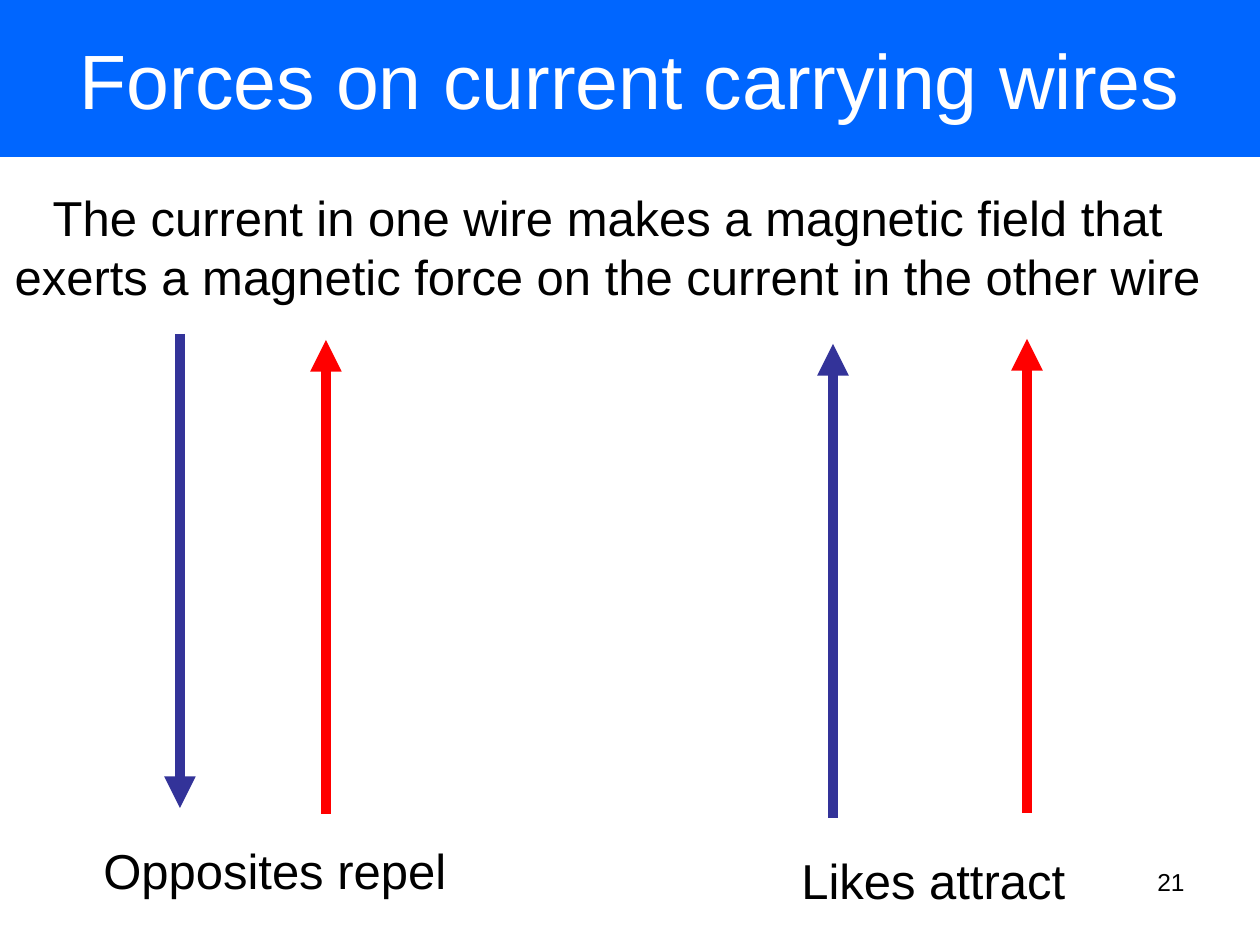
import pptx
import pptx.util
import pptx.dml.color
import pptx.enum.shapes
import pptx.enum.text
import pptx.oxml.ns
from lxml import etree

EMU_PER_PX = 914400 / 126
ALIGN = pptx.enum.text.PP_ALIGN
ANCHOR = pptx.enum.text.MSO_ANCHOR
AUTO_SIZE = pptx.enum.text.MSO_AUTO_SIZE

THEME = {
    "font": "Arial",
    "title_size": 44, "body_size": 28, "number_size": 14,
    "banner": "0066FF", "title": "FFFFFF", "text": "000000",
    "blue_wire": "333399", "red_wire": "FF0000",
    "wire_width": 6,
}


def px(length):
    return pptx.util.Emu(round(length * EMU_PER_PX))


def rgb(name):
    return pptx.dml.color.RGBColor.from_string(THEME[name])


def apply(target, values):
    for attribute, value in values.items():
        setattr(target, attribute, value)


def write_lines(frame, lines, size, color, align, **frame_format):
    """Fill a text frame with one formatted paragraph per line."""
    apply(frame, frame_format)
    for index, line in enumerate(lines):
        paragraph = frame.paragraphs[0] if index == 0 else frame.add_paragraph()
        paragraph.alignment = align
        run = paragraph.add_run()
        run.text = line
        apply(run.font, {"name": THEME["font"],
                         "size": pptx.util.Pt(THEME[size])})
        run.font.color.rgb = rgb(color)


def add_title(slide, text, box):
    banner = slide.shapes.title
    apply(banner, dict(zip(("left", "top", "width", "height"), map(px, box))))
    banner.fill.solid()
    banner.fill.fore_color.rgb = rgb("banner")
    write_lines(banner.text_frame, [text], "title_size", "title", ALIGN.CENTER,
                vertical_anchor=ANCHOR.MIDDLE, word_wrap=True,
                auto_size=AUTO_SIZE.NONE)


def add_label(slide, lines, box, size="body_size", align=ALIGN.LEFT,
              wrap=False, auto_size=AUTO_SIZE.SHAPE_TO_FIT_TEXT):
    label = slide.shapes.add_textbox(*map(px, box))
    write_lines(label.text_frame, lines, size, "text", align,
                word_wrap=wrap, auto_size=auto_size)


def add_wire(slide, x, start, tip, color):
    """Draw a vertical current arrow pointing at tip."""
    wire = slide.shapes.add_connector(
        pptx.enum.shapes.MSO_CONNECTOR.STRAIGHT,
        px(x), px(start), px(x), px(tip))
    wire.line.width = pptx.util.Pt(THEME["wire_width"])
    wire.line.color.rgb = rgb(color)
    qn = pptx.oxml.ns.qn
    etree.SubElement(wire.line._get_or_add_ln(), qn("a:tailEnd"),
                     type="triangle")
    etree.SubElement(wire._element.spPr, qn("a:effectLst"))


def main():
    presentation = pptx.Presentation()
    apply(presentation, {"slide_width": px(1260), "slide_height": px(945)})
    slide = presentation.slides.add_slide(presentation.slide_layouts[5])

    # Heading and explanation
    add_title(slide, "Forces on current carrying wires", (0, 0, 1260, 157))
    add_label(slide, ["The current in one wire makes a magnetic field that",
                      "exerts a magnetic force on the current in the other wire"],
              (0, 181, 1215, 130), align=ALIGN.CENTER)

    # Opposite currents on the left, like currents on the right
    for x, start, tip, color in (
            (180, 334, 808, "blue_wire"), (326, 814, 340, "red_wire"),
            (833, 818, 344, "blue_wire"), (1027, 813, 339, "red_wire")):
        add_wire(slide, x, start, tip, color)

    # Captions
    add_label(slide, ["Opposites repel"], (91, 834, 369, 72))
    add_label(slide, ["Likes attract"], (789, 844, 290, 72))

    # Slide number
    add_label(slide, ["21"], (903, 861, 294, 66), size="number_size",
              align=ALIGN.RIGHT, wrap=True, auto_size=AUTO_SIZE.NONE)

    presentation.save("out.pptx")


if __name__ == "__main__":
    main()
